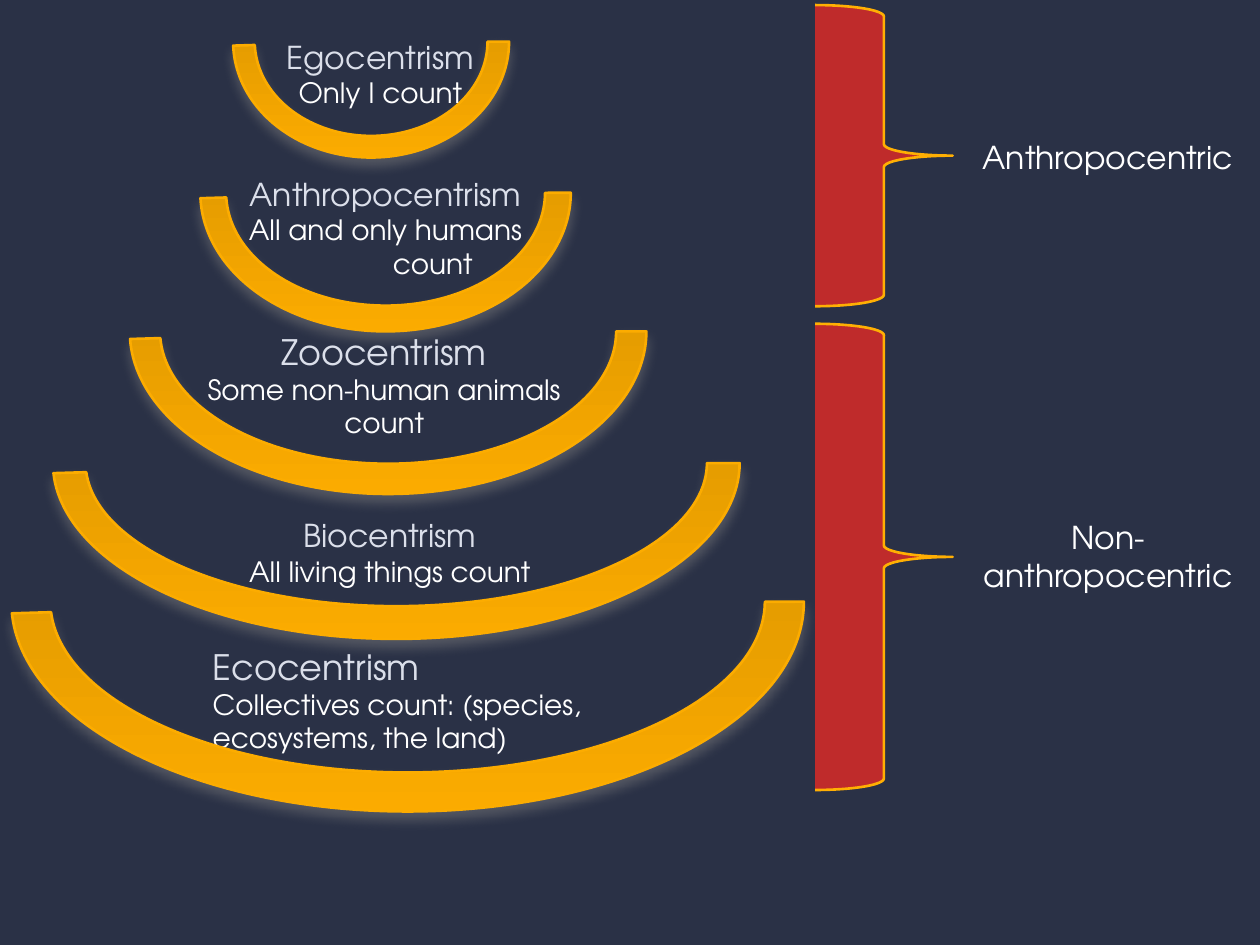
from dataclasses import dataclass

from lxml.etree import SubElement
from pptx import Presentation
from pptx.dml.color import RGBColor
from pptx.enum.shapes import MSO_SHAPE as Preset
from pptx.enum.text import MSO_AUTO_SIZE as AutoSize, PP_ALIGN as Align
from pptx.oxml.ns import qn
from pptx.util import Pt

FONT = "TeX Gyre Adventor"
COLORS = {
    "background": "2A3146",
    "heading": "DBDFEA",
    "text": "FFFFFF",
    "arc_dark": "CF8D00",
    "arc_light": "FBAB00",
    "arc_line": "FCAC00",
    "arc_shadow": "808080",
    "brace": "BF2B2B",
    "brace_line": "FFAF03",
}


@dataclass(frozen=True)
class Box:
    """A rectangle in points."""
    left: float
    top: float
    width: float
    height: float

    def lengths(self) -> tuple:
        return Pt(self.left), Pt(self.top), Pt(self.width), Pt(self.height)


@dataclass(frozen=True)
class Line:
    text: str
    size: int = 16
    color: str = "text"
    indent: float = 0


@dataclass(frozen=True)
class Circle:
    """One moral circle: its arc, and the label that sits inside it."""
    arc: Box
    label: Box
    lines: tuple
    align: Align = Align.CENTER
    label_in_front: bool = True


@dataclass(frozen=True)
class Group:
    brace: Box
    label: Box
    text: str
    wrap: bool = False


CIRCLES = [
    Circle(Box(133.2, -42.48, 157.68, 132.48), Box(156.24, 18, 122.4, 48.24),
           (Line("Egocentrism", 18, "heading"), Line("Only I count"))),
    Circle(Box(114.48, 30.96, 211.68, 158.4), Box(133.92, 96.48, 172.8, 67.68),
           (Line("Anthropocentrism", 18, "heading"), Line("All and only humans"),
            Line("count", indent=54))),
    Circle(Box(74.16, 96.48, 295.2, 185.76), Box(108, 185.04, 223.2, 70.56),
           (Line("Zoocentrism", 20, "heading"), Line("Some non-human animals"),
            Line("count")), label_in_front=False),
    Circle(Box(30.24, 164.16, 392.4, 200.88), Box(133.92, 291.6, 177.84, 48.24),
           (Line("Biocentrism", 18, "heading"), Line("All living things count"))),
    Circle(Box(6.48, 223.92, 452.88, 239.76), Box(114.48, 365.04, 228.24, 94.32),
           (Line("Ecocentrism", 20, "heading"), Line("Collectives count: (species,"),
            Line("ecosystems, the land)")), Align.LEFT, label_in_front=False),
]
GROUPS = [
    Group(Box(465.84, 185.04, 78.48, 266.4), Box(546.48, 292.32, 173.52, 51.12),
          "Non-anthropocentric", wrap=True),
    Group(Box(465.84, 2.88, 78.48, 172.08), Box(554.4, 75.6, 159.84, 28.8),
          "Anthropocentric"),
]


def rgb(name: str) -> RGBColor:
    return RGBColor.from_string(COLORS[name])


def add_text(slide, box: Box, lines: tuple, *, align=Align.CENTER, wrap=False) -> None:
    frame = slide.shapes.add_textbox(*box.lengths()).text_frame
    frame.word_wrap = wrap
    frame.auto_size = AutoSize.SHAPE_TO_FIT_TEXT
    for index, line in enumerate(lines):
        paragraph = frame.add_paragraph() if index else frame.paragraphs[0]
        paragraph.alignment = align
        if line.indent:
            paragraph._p.get_or_add_pPr().set("marL", str(Pt(line.indent)))
        run = paragraph.add_run()
        run.text = line.text
        run.font.name = FONT
        run.font.size = Pt(line.size)
        run.font.color.rgb = rgb(line.color)


def add_outlined_shape(slide, preset: Preset, box: Box, line_color: str):
    shape = slide.shapes.add_shape(preset, *box.lengths())
    shape.shadow.inherit = False
    shape.line.color.rgb = rgb(line_color)
    shape.line.width = Pt(1.5)
    return shape


def add_soft_shadow(shape) -> None:
    effects = shape._element.spPr.find(qn("a:effectLst"))
    shadow = SubElement(effects, qn("a:outerShdw"), blurRad=str(Pt(7)),
                        dist=str(Pt(4)), dir="5400000", rotWithShape="0")
    color = SubElement(shadow, qn("a:srgbClr"), val=COLORS["arc_shadow"])
    SubElement(color, qn("a:alpha"), val="50000")


def add_arc(slide, box: Box) -> None:
    arc = add_outlined_shape(slide, Preset.BLOCK_ARC, box, "arc_line")
    arc.rotation = 180
    for index, value in enumerate((108, 214.989, 0.093)):
        arc.adjustments[index] = value
    arc.fill.gradient()
    arc.fill.gradient_angle = 90
    for stop, position, name in zip(arc.fill.gradient_stops, (0, 1),
                                    ("arc_dark", "arc_light")):
        stop.position = position
        stop.color.rgb = rgb(name)
    add_soft_shadow(arc)


def add_circle(slide, circle: Circle) -> None:
    if circle.label_in_front:
        add_arc(slide, circle.arc)
    add_text(slide, circle.label, circle.lines, align=circle.align)
    if not circle.label_in_front:
        add_arc(slide, circle.arc)


def add_group(slide, group: Group) -> None:
    brace = add_outlined_shape(slide, Preset.RIGHT_BRACE, group.brace, "brace_line")
    brace.fill.solid()
    brace.fill.fore_color.rgb = rgb("brace")
    add_text(slide, group.label, (Line(group.text, 18),), wrap=group.wrap,
             align=Align.CENTER if group.wrap else Align.LEFT)


def main() -> None:
    presentation = Presentation()
    presentation.slide_width, presentation.slide_height = Pt(720), Pt(540)
    slide = presentation.slides.add_slide(presentation.slide_layouts[6])
    slide.background.fill.solid()
    slide.background.fill.fore_color.rgb = rgb("background")
    for circle in CIRCLES:
        add_circle(slide, circle)
    for group in GROUPS:
        add_group(slide, group)
    presentation.save("out.pptx")


if __name__ == "__main__":
    main()
